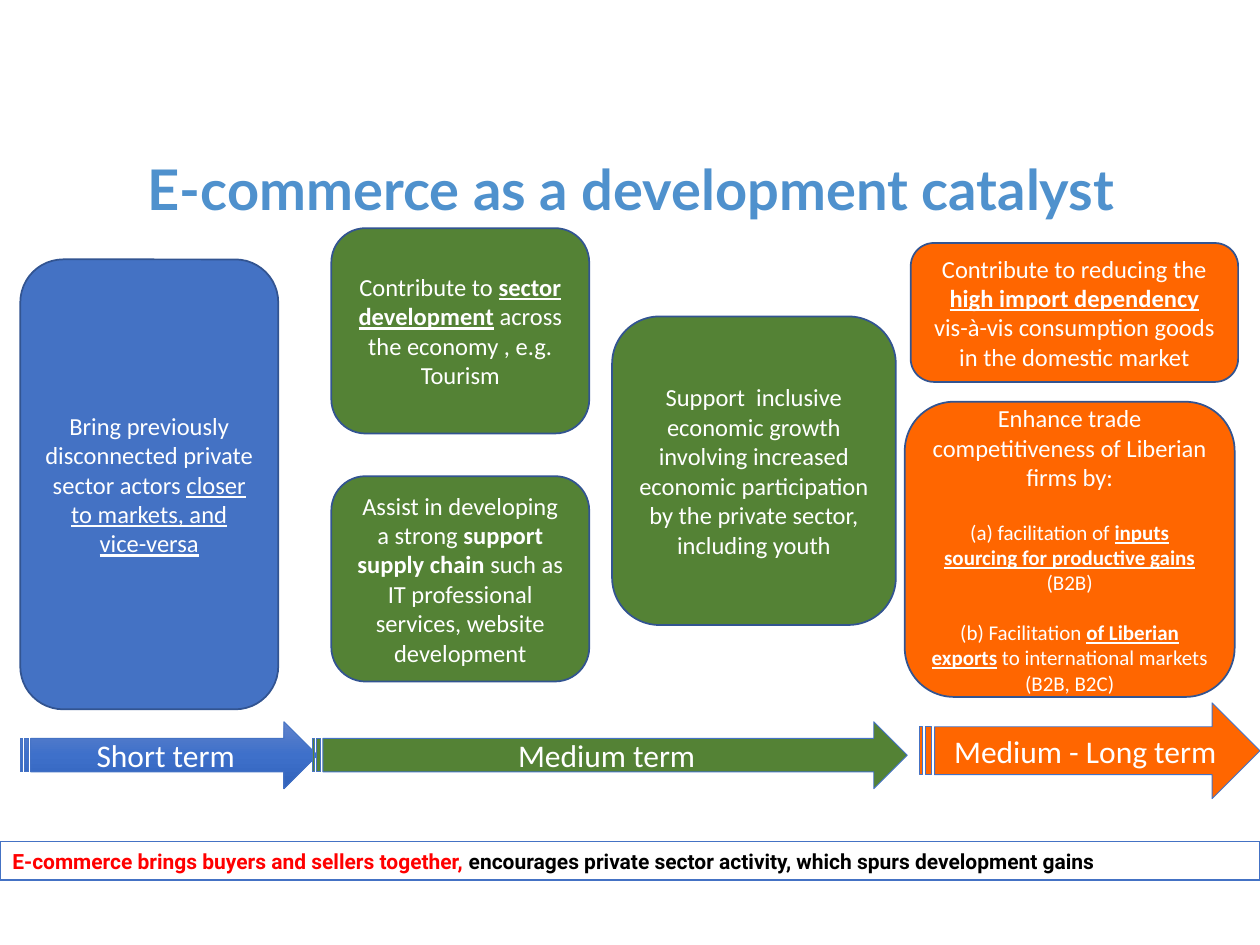
from copy import deepcopy

from pptx import Presentation
from pptx.dml.color import RGBColor
from pptx.enum.shapes import MSO_SHAPE as Shape
from pptx.enum.text import MSO_ANCHOR as Anchor, PP_ALIGN as Align
from pptx.oxml.ns import qn
from pptx.util import Cm, Pt

BLUE, GREEN, ORANGE = "4472C4", "548235", "FF6600"
WHITE, CARD_EDGE = "FFFFFF", "325491"
ARROW_GRADIENT = ["6183CB", "3E70CA", "3062BB"]
BOLD, UNDERLINE, STRONG = "b", "u", "bu"


def color(hex_text):
    return RGBColor.from_string(hex_text)


def place(box, left, top, width, height):
    """Turn a position relative to a box into slide lengths."""
    return Cm(box[0] + left), Cm(box[1] + top), Cm(width), Cm(height)


def add_run(para, text, size, ink, style="", font="Calibri"):
    span = para.add_run()
    span.text = text
    span.font.name, span.font.size = font, Pt(size)
    span.font.bold = BOLD in style
    span.font.underline = UNDERLINE in style
    span.font.color.rgb = color(ink)


def add_block(page, kind, position, fill, edge, edge_width):
    block = page.shapes.add_shape(kind, *position)
    block.shadow.inherit = False
    block.line.color.rgb = color(edge)
    block.line.width = Pt(edge_width)
    if isinstance(fill, list):
        fill_gradient(block, fill)
    elif fill:
        block.fill.solid()
        block.fill.fore_color.rgb = color(fill)
    else:
        block.fill.background()
    frame = block.text_frame
    frame.word_wrap = True
    frame.vertical_anchor = Anchor.MIDDLE
    return frame


def fill_gradient(block, hexes):
    """Spread the colours evenly from top to bottom."""
    block.fill.gradient()
    block.fill.gradient_angle = 270
    stop_list = block._element.spPr.find(".//" + qn("a:gsLst"))
    while len(stop_list) < len(hexes):
        stop_list.append(deepcopy(stop_list[0]))
    for index, (stop, hex_text) in enumerate(zip(block.fill.gradient_stops, hexes)):
        stop.position = index / (len(hexes) - 1)
        stop.color.rgb = color(hex_text)


def add_card(page, position, fill, paragraphs):
    """Each paragraph is a size, the space before it, and its runs."""
    frame = add_block(page, Shape.ROUNDED_RECTANGLE, position, fill, CARD_EDGE, 1)
    for index, (size, gap, runs) in enumerate(paragraphs):
        para = frame.add_paragraph() if index else frame.paragraphs[0]
        para.alignment = Align.CENTER
        if index:
            para.space_before = Pt(gap)
        for text, style in runs:
            add_run(para, text, size, WHITE, style)


def add_stage(page, box, fill, cards, arrow, label, arrow_fill=None):
    """Cards of one time span, with the striped arrow that names it below."""
    for position, paragraphs in cards:
        add_card(page, place(box, *position), fill, paragraphs)
    frame = add_block(page, Shape.STRIPED_RIGHT_ARROW, place(box, *arrow),
                      arrow_fill or fill, BLUE, 0.5)
    para = frame.paragraphs[0]
    para.alignment = Align.CENTER
    add_run(para, label, 18, WHITE)


def add_title(page, box):
    frame = page.shapes.add_textbox(*place(box, 0, 0, 22.86, 2.56)).text_frame
    frame.word_wrap = True
    frame.vertical_anchor = Anchor.MIDDLE
    para = frame.paragraphs[0]
    para.alignment = Align.CENTER
    add_run(para, "E-commerce as a development catalyst", 32, "4F91CD", BOLD, "Lato")


def add_conclusion(page, box):
    frame = add_block(page, Shape.RECTANGLE, place(box, 0, 0, 25.4, 0.77),
                      None, BLUE, 0.75)
    para = frame.paragraphs[0]
    para.alignment = Align.LEFT
    add_run(para, "E-commerce brings buyers and sellers together, ",
            12, "FF0000", BOLD, "Roboto")
    add_run(para, "encourages private sector activity, which spurs development gains",
            12, "000000", BOLD, "Roboto")


SHORT_CARDS = [
    ((0, 0.63, 5.2, 9.07), [(14, 0, [
        ("Bring previously disconnected private sector actors ", ""),
        ("closer to markets, and vice-versa", UNDERLINE)])]),
]
MEDIUM_CARDS = [
    ((0.38, 0, 5.2, 4.14), [(14, 0, [
        ("Contribute to ", ""),
        ("sector development", STRONG),
        (" across the economy , e.g. Tourism", "")])]),
    ((6.04, 1.78, 5.72, 6.22), [(14, 0, [
        ("Support  inclusive economic growth involving increased economic "
         "participation by the private sector, including youth", "")])]),
    ((0.38, 5, 5.2, 4.14), [(14, 0, [
        ("Assist in developing a strong ", ""),
        ("support supply chain ", BOLD),
        ("such as IT professional services, website development", "")])]),
]
LONG_CARDS = [
    ((0.12, 0.3, 6.6, 2.8), [(14, 0, [
        ("Contribute to reducing the ", ""),
        ("high import dependency ", STRONG),
        ("vis-à-vis consumption goods in the domestic market", "")])]),
    ((0, 3.5, 6.65, 5.95), [
        (14, 0, [("Enhance trade competitiveness of Liberian firms by:", "")]),
        (12, 16, [
            ("(a) facilitation of ", ""),
            ("inputs sourcing for productive gains ", STRONG),
            ("(B2B)", "")]),
        (12, 14, [
            ("(b) Facilitation ", ""),
            ("of Liberian exports", STRONG),
            (" to international markets (B2B, B2C)", "")])]),
]


def main():
    deck = Presentation()
    deck.slide_width, deck.slide_height = Cm(25.4), Cm(19.05)
    page = deck.slides.add_slide(deck.slide_layouts[6])
    stage_top = 4.6
    add_conclusion(page, (0, 16.97))
    add_title(page, (1.3, 2.51))
    add_stage(page, (0.41, stage_top), BLUE, SHORT_CARDS,
              (0, 9.95, 5.99, 1.35), "Short term", ARROW_GRADIENT)
    add_stage(page, (6.3, stage_top), GREEN, MEDIUM_CARDS,
              (0, 9.95, 11.99, 1.35), "Medium term")
    add_stage(page, (18.24, stage_top), ORANGE, LONG_CARDS,
              (0.3, 9.57, 6.86, 1.93), "Medium - Long term")
    deck.save("out.pptx")


if __name__ == "__main__":
    main()
